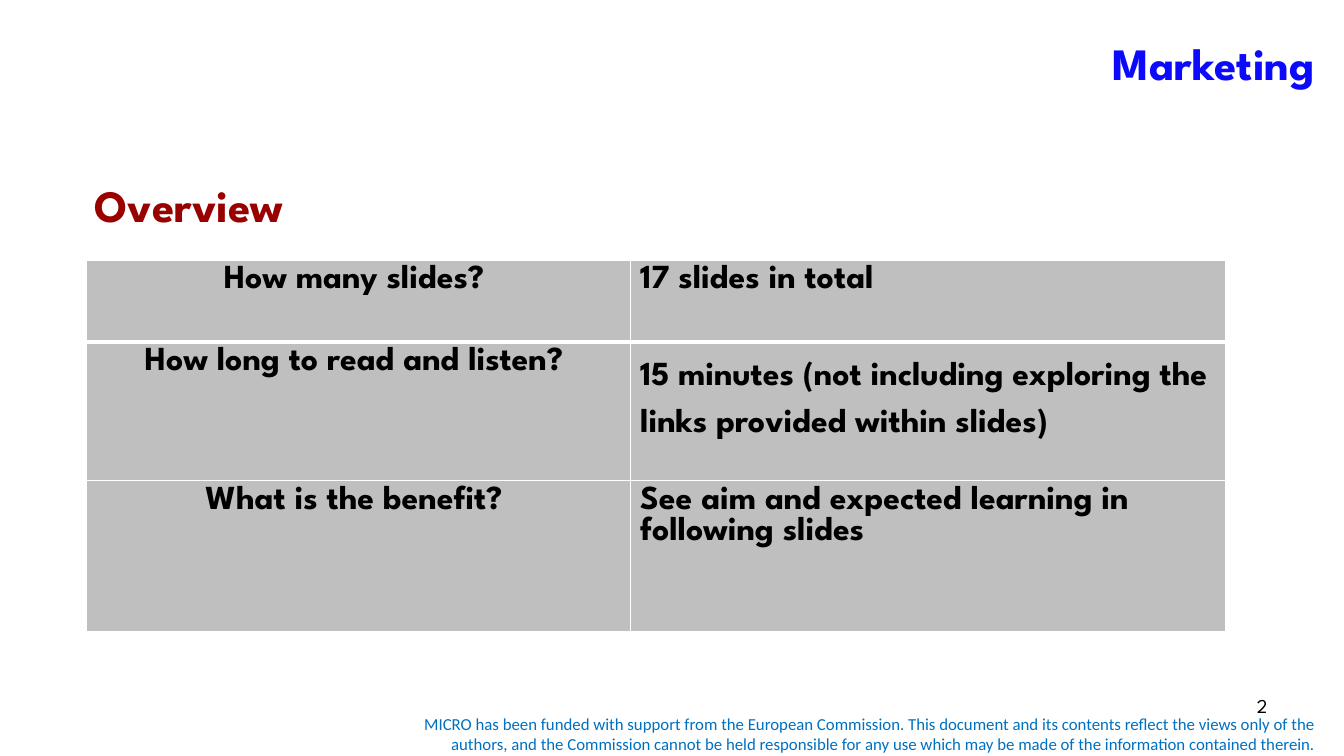
from dataclasses import dataclass

from lxml.etree import SubElement
from pptx import Presentation
from pptx.dml.color import RGBColor
from pptx.enum.text import MSO_ANCHOR, PP_ALIGN
from pptx.oxml.ns import qn
from pptx.util import Inches, Pt

SPARTAN = "League Spartan"
BLACK, WHITE, GREY = "000000", "FFFFFF", "BFBFBF"


@dataclass
class Style:
    size: int
    color: str
    font: str = SPARTAN
    bold: bool = False
    align: PP_ALIGN = PP_ALIGN.LEFT


@dataclass
class Label:
    text: str
    box: tuple[float, float, float, float]
    style: Style
    anchor: MSO_ANCHOR = MSO_ANCHOR.TOP


@dataclass
class Row:
    question: str
    answer: str
    height: float
    spacing: float = 1.0


TITLE = Label("Marketing", (1.14, 0, 12, 1.25),
              Style(32, "0B0AFD", bold=True, align=PP_ALIGN.RIGHT), MSO_ANCHOR.MIDDLE)
LABELS = [
    Label("MICRO has been funded with support from the European Commission. "
          "This document and its contents reflect the views only of the authors, "
          "and the Commission cannot be held responsible for any use which may be "
          "made of the information contained therein.",
          (3.75, 7.03, 9.4, 0.5),
          Style(12, "0070C0", "Calibri", align=PP_ALIGN.RIGHT), MSO_ANCHOR.MIDDLE),
    Label("2", (9.56, 6.83, 3.11, 0.52), Style(14, BLACK, align=PP_ALIGN.RIGHT)),
    Label("Overview", (0.84, 1.71, 2.9, 0.64), Style(32, "990000", bold=True)),
]
COLUMN_WIDTHS = (5.39, 5.91)
COLUMN_STYLES = (Style(24, BLACK, bold=True, align=PP_ALIGN.CENTER),
                 Style(24, BLACK, bold=True))
ROWS = [
    Row("How many slides? ", "17 slides in total", 0.81),
    Row("How long to read and listen? ",
        "15 minutes (not including exploring the links provided within slides)", 1.38, 1.5),
    Row("What is the benefit? ", "See aim and expected learning in following slides", 1.5),
]


def rgb(color: str) -> RGBColor:
    return RGBColor.from_string(color)


def write(tf, text: str, style: Style, spacing: float = 1.0) -> None:
    p = tf.paragraphs[0]
    p.alignment = style.align
    p.line_spacing = spacing
    r = p.add_run()
    r.text = text
    r.font.name, r.font.size, r.font.bold = style.font, Pt(style.size), style.bold
    r.font.color.rgb = rgb(style.color)


def fill_label(sp, label: Label) -> None:
    sp.left, sp.top, sp.width, sp.height = map(Inches, label.box)
    tf = sp.text_frame
    tf.word_wrap = True
    tf.vertical_anchor = label.anchor
    write(tf, label.text, label.style)


def add_borders(cell, top: float, bottom: float) -> None:
    tc_pr = cell._tc.get_or_add_tcPr()
    for side, width in (("L", 1), ("R", 1), ("T", top), ("B", bottom)):
        ln = SubElement(tc_pr, qn(f"a:ln{side}"), w=str(Pt(width)))
        SubElement(SubElement(ln, qn("a:solidFill")), qn("a:srgbClr"), val=WHITE)


def add_overview_table(s) -> None:
    height = sum(row.height for row in ROWS)
    frame = s.shapes.add_table(len(ROWS), len(COLUMN_WIDTHS), Inches(0.86), Inches(2.58),
                               Inches(sum(COLUMN_WIDTHS)), Inches(height))
    table = frame.table
    for column, width in zip(table.columns, COLUMN_WIDTHS):
        column.width = Inches(width)
    for i, row in enumerate(ROWS):
        table.rows[i].height = Inches(row.height)
        for j, text in enumerate((row.question, row.answer)):
            cell = table.cell(i, j)
            # A thick rule separates the first row from the rest
            add_borders(cell, top=3 if i == 1 else 1, bottom=3 if i == 0 else 1)
            cell.fill.solid()
            cell.fill.fore_color.rgb = rgb(GREY)
            write(cell.text_frame, text, COLUMN_STYLES[j], row.spacing if j else 1.0)


def main() -> None:
    prs = Presentation()
    prs.slide_width, prs.slide_height = Inches(13.33), Inches(7.5)
    s = prs.slides.add_slide(prs.slide_layouts[5])

    # Title
    fill_label(s.shapes.title, TITLE)

    # Overview table
    add_overview_table(s)

    # Funding note, slide number and heading
    for label in LABELS:
        fill_label(s.shapes.add_textbox(*map(Inches, label.box)), label)

    prs.save("out.pptx")


if __name__ == "__main__":
    main()
